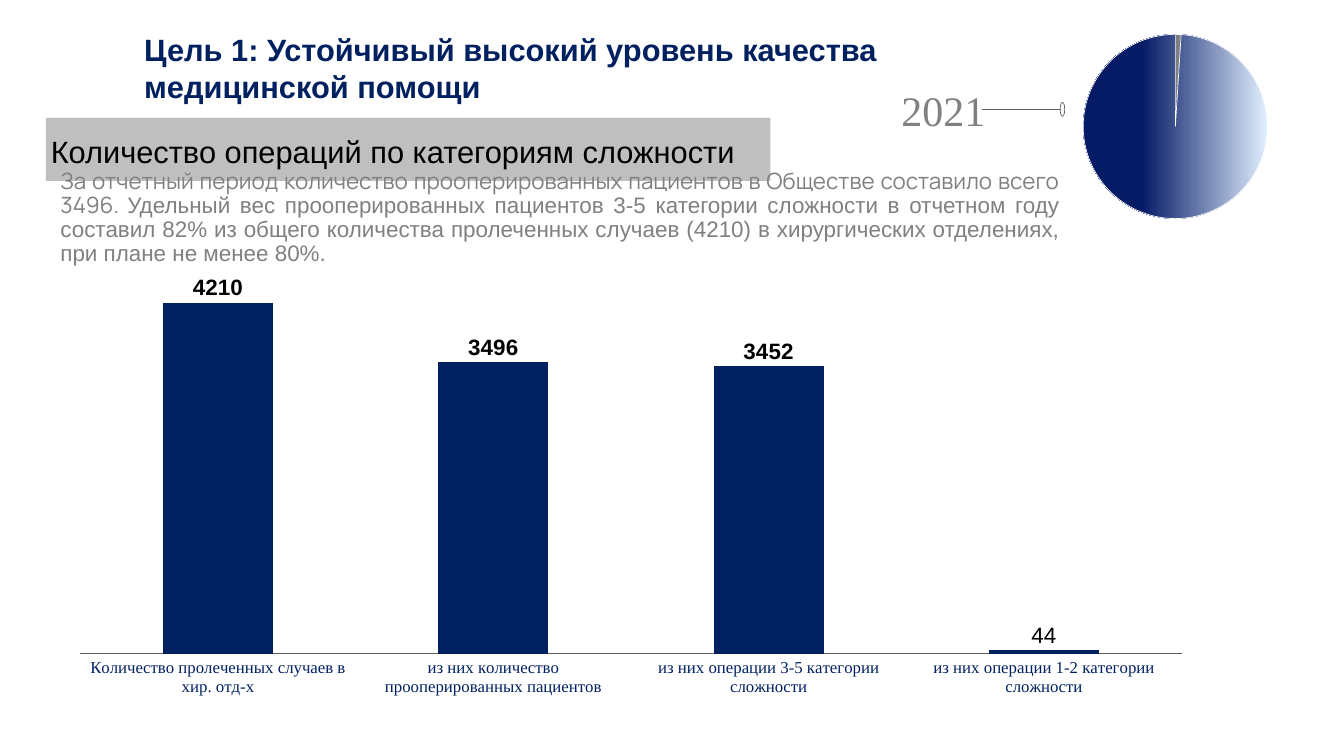
from lxml import etree
from pptx import Presentation
from pptx.chart.data import CategoryChartData
from pptx.dml.color import RGBColor
from pptx.enum.chart import XL_CHART_TYPE as ChartType, XL_LABEL_POSITION as LabelPosition
from pptx.enum.chart import XL_TICK_LABEL_POSITION as TickLabels, XL_TICK_MARK as TickMark
from pptx.enum.shapes import MSO_CONNECTOR as Connector, MSO_SHAPE as Shape
from pptx.enum.text import MSO_ANCHOR as Anchor, PP_ALIGN as Align
from pptx.oxml.ns import qn
from pptx.util import Inches, Pt

NAVY = RGBColor(0x00, 0x20, 0x60)
DEEP_BLUE = RGBColor(0x06, 0x1B, 0x66)
PALE_BLUE = RGBColor(0xE1, 0xEF, 0xFF)
GRAY = RGBColor(0x80, 0x80, 0x80)
BAND = RGBColor(0xBF, 0xBF, 0xBF)
LINE = RGBColor(0x5E, 0x5E, 0x5E)
BLACK = RGBColor(0, 0, 0)
WHITE = RGBColor(0xFF, 0xFF, 0xFF)

# Content
TITLE = "Цель 1: Устойчивый высокий уровень качества медицинской помощи"
SUBTITLE = "Количество операций по категориям сложности"
SUMMARY = [
    ("За отчетный период количество прооперированных пациентов в Обществе "
     "составило всего 3496. ", "Manrope"),
    ("Удельный вес прооперированных пациентов 3-5 категории сложности в отчетном "
     "году составил 82% из общего количества пролеченных случаев (4210) в "
     "хирургических отделениях, при плане не менее 80%.", "Arial"),
]
YEAR = "2021"
OPERATIONS = {
    "Количество пролеченных случаев в хир. отд-х": 4210,
    "из них количество прооперированных пациентов": 3496,
    "из них операции 3-5 категории сложности": 3452,
    "из них операции 1-2 категории сложности": 44,
}
SHARES = {"1": 1, "2": 99}

# Boxes: left, top, width, height in inches
TITLE_BOX = (2.76, 0.68, 15.56, 1.34)
BAND_BOX = (0.91, 2.34, 14.37, 1.25)
SUMMARY_BOX = (1.1, 3.32, 20.03, 2.79)
YEAR_BOX = (17.88, 1.67, 2.08, 1.01)
COLUMN_BOX = (1.4, 5.44, 24.06, 8.37)
PIE_BOX = (20.74, 0.54, 5.15, 3.94)
POINTER_START, POINTER_END, POINTER_Y = 19.47, 21.03, 2.17
DOT_WIDTH, DOT_HEIGHT = 0.09, 0.28


def inches(box):
    return [Inches(length) for length in box]


def style(font, size, name, color, bold=False):
    font.size, font.name, font.bold = Pt(size), name, bold
    font.color.rgb = color


def write(shape, runs, size, color, align=Align.LEFT, spacing=1.0,
          anchor=Anchor.TOP, bold=False):
    frame = shape.text_frame
    frame.word_wrap = True
    frame.vertical_anchor = anchor
    paragraph = frame.paragraphs[0]
    paragraph.alignment, paragraph.line_spacing = align, spacing
    for text, name in runs:
        run = paragraph.add_run()
        run.text = text
        style(run.font, size, name, color, bold)
    return frame


def add_chart(slide, kind, values, box, plot_area):
    data = CategoryChartData()
    data.categories = list(values)
    data.add_series("Series 1", list(values.values()))
    chart = slide.shapes.add_chart(kind, *inches(box), data).chart
    chart.has_legend = chart.has_title = False
    style(chart.font, 10, "Manrope", BLACK)

    # Fixed inner plot area, as shares of the chart
    area = chart.plots[0]._element.getparent()
    for old in area.findall(qn("c:layout")):
        area.remove(old)
    layout = etree.Element(qn("c:layout"))
    manual = etree.SubElement(layout, qn("c:manualLayout"))
    settings = [("layoutTarget", "inner"), ("xMode", "edge"), ("yMode", "edge")]
    for tag, value in settings + list(zip("xywh", plot_area)):
        etree.SubElement(manual, qn(f"c:{tag}")).set("val", str(value))
    area.insert(0, layout)
    return chart


def add_operations_chart(slide):
    chart = add_chart(slide, ChartType.COLUMN_CLUSTERED, OPERATIONS, COLUMN_BOX,
                      (0.008, 0.01, 0.908, 0.898))
    plot = chart.plots[0]
    plot.gap_width, plot.vary_by_categories = 150, False
    series = plot.series[0]
    series.format.fill.solid()
    series.format.fill.fore_color.rgb = NAVY

    labels = series.data_labels
    labels.show_value, labels.position = True, LabelPosition.OUTSIDE_END
    style(labels.font, 32, "Arial", BLACK, bold=True)
    last = len(OPERATIONS) - 1
    last_label = series.points[last].data_label
    last_label.text_frame.text = str(list(OPERATIONS.values())[last])
    style(last_label.text_frame.paragraphs[0].runs[0].font, 32, "Arial", BLACK)
    last_label.position = LabelPosition.OUTSIDE_END

    categories, values = chart.category_axis, chart.value_axis
    categories.major_tick_mark = TickMark.NONE
    categories.tick_label_position = TickLabels.LOW
    style(categories.tick_labels.font, 24, "Times New Roman", NAVY)
    categories.format.line.color.rgb = LINE
    categories.format.line.width = Pt(0.75)
    values.minimum_scale, values.maximum_scale = 0, 4500
    values.has_major_gridlines = values.visible = False


def add_share_pie(slide):
    chart = add_chart(slide, ChartType.PIE, SHARES, PIE_BOX, (0.145, 0.035, 0.71, 0.93))
    plot = chart.plots[0]
    plot.vary_by_categories = False
    small, large = (plot.series[0].points[i].format for i in range(len(SHARES)))
    small.fill.solid()
    small.fill.fore_color.rgb = GRAY
    large.fill.gradient()
    large.fill.gradient_angle = 180
    stops = [(0, PALE_BLUE), (0.68, DEEP_BLUE)]
    for stop, (position, color) in zip(large.fill.gradient_stops, stops):
        stop.position, stop.color.rgb = position, color
    for part in (small, large):
        part.line.color.rgb = WHITE
        part.line.width = Pt(1)


def add_year_pointer(slide):
    y = Inches(POINTER_Y)
    pointer = slide.shapes.add_connector(
        Connector.STRAIGHT, Inches(POINTER_START), y, Inches(POINTER_END), y)
    etree.SubElement(pointer._element.spPr, qn("a:effectLst"))
    dot = slide.shapes.add_shape(Shape.OVAL, *inches(
        (POINTER_END, POINTER_Y - DOT_HEIGHT / 2, DOT_WIDTH, DOT_HEIGHT)))
    dot.shadow.inherit = False
    dot.fill.background()
    for shape, width in ((pointer, 0.75), (dot, 1)):
        shape.line.color.rgb = LINE
        shape.line.width = Pt(width)


def main():
    presentation = Presentation()
    presentation.slide_width, presentation.slide_height = Inches(26.66), Inches(15)
    slide = presentation.slides.add_slide(presentation.slide_layouts[5])
    shapes = slide.shapes

    # Title
    title = shapes.title
    title.left, title.top, title.width, title.height = inches(TITLE_BOX)
    write(title, [(TITLE, "Arial")], 44, NAVY, anchor=Anchor.MIDDLE, bold=True)

    add_operations_chart(slide)

    # Subtitle band
    band = shapes.add_shape(Shape.RECTANGLE, *inches(BAND_BOX))
    band.shadow.inherit = False
    band.fill.solid()
    band.fill.fore_color.rgb = BAND
    band.line.fill.background()
    write(band, [(SUBTITLE, "Arial")], 44, BLACK, spacing=1.1, anchor=Anchor.MIDDLE)

    # Year, summary and share of simple operations
    add_year_pointer(slide)
    write(shapes.add_textbox(*inches(SUMMARY_BOX)), SUMMARY, 32, GRAY,
          align=Align.JUSTIFY, spacing=0.9)
    year = write(shapes.add_textbox(*inches(YEAR_BOX)),
                 [(YEAR, "Times New Roman")], 60, GRAY)
    year.margin_left = year.margin_right = year.margin_top = year.margin_bottom = 0
    add_share_pie(slide)

    presentation.save("out.pptx")


if __name__ == "__main__":
    main()
